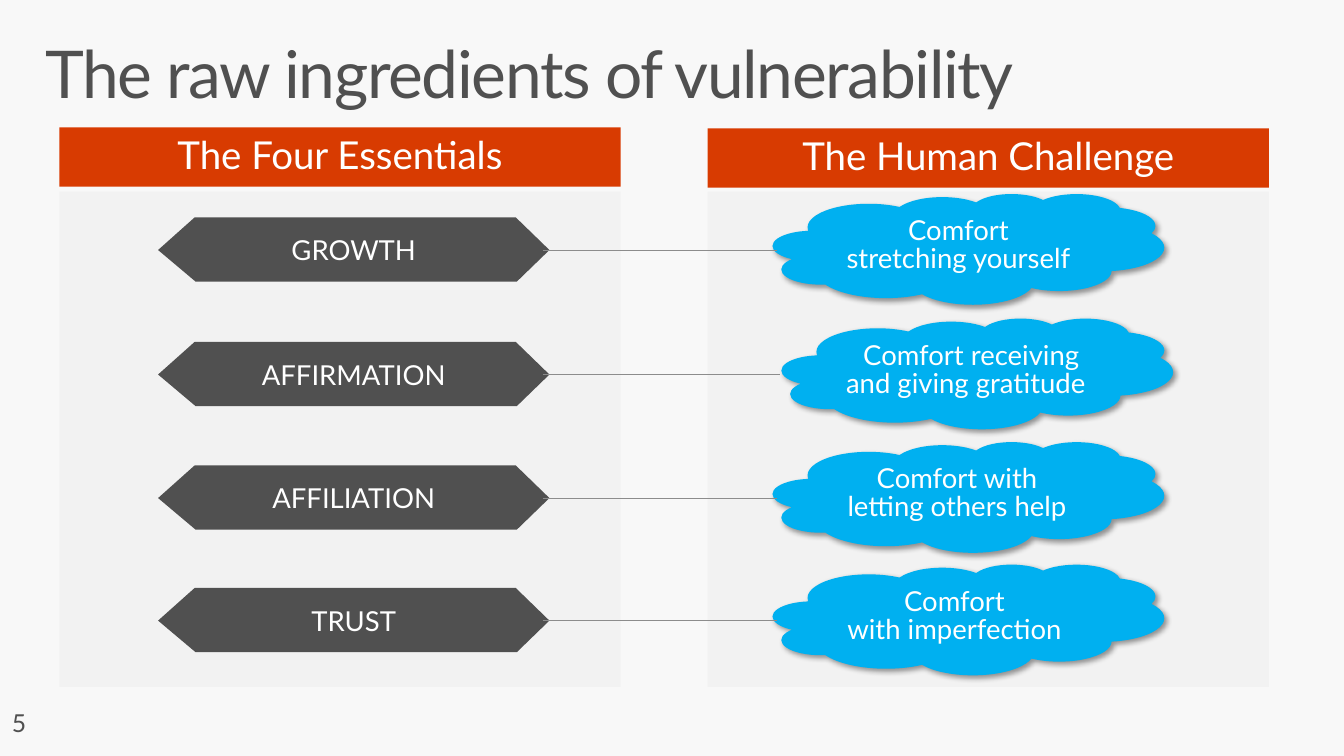
from lxml.etree import SubElement
from pptx import Presentation
from pptx.dml.color import RGBColor
from pptx.enum.shapes import MSO_CONNECTOR as CONNECTOR, MSO_SHAPE as SHAPE
from pptx.enum.text import MSO_ANCHOR as ANCHOR, PP_ALIGN as ALIGN
from pptx.oxml.ns import qn
from pptx.util import Pt

PX = 9144  # EMU per px, 100 px to the inch
GREY, WHITE, PANEL, ORANGE, BLUE = "505050", "FFFFFF", "F2F2F2", "D83B01", "00B0F0"
rgb = RGBColor.from_string


def paint(shape, color):
    """Give the shape a flat fill with no outline or shadow."""
    shape.fill.solid()
    shape.fill.fore_color.rgb = rgb(color)
    shape.line.fill.background()
    shape.shadow.inherit = False


def write(shape, lines, size, color, inset=(12, 6), align=ALIGN.CENTER,
          anchor=ANCHOR.MIDDLE, spacing=1.0, wrap=True):
    """Fill the shape with (text, left indent) paragraphs."""
    frame = shape.text_frame
    frame.word_wrap = wrap
    frame.vertical_anchor = anchor
    frame.margin_left = frame.margin_right = inset[0] * PX
    frame.margin_top = frame.margin_bottom = inset[1] * PX
    for index, (text, indent) in enumerate(lines):
        paragraph = frame.add_paragraph() if index else frame.paragraphs[0]
        paragraph.text = text
        paragraph.alignment = align
        paragraph.line_spacing = spacing
        if indent:
            paragraph._p.get_or_add_pPr().set("marL", str(indent * PX))
        paragraph.font.name = "Lato"
        paragraph.font.size = Pt(size)
        paragraph.font.color.rgb = rgb(color)


presentation = Presentation()
presentation.slide_width = 1360 * PX
presentation.slide_height = 765 * PX
slide = presentation.slides.add_slide(presentation.slide_layouts[6])
slide.background.fill.solid()
slide.background.fill.fore_color.rgb = rgb("F8F8F8")
shapes = slide.shapes

# Title and slide number
title = shapes.add_textbox(30 * PX, 32 * PX, 1300 * PX, 100 * PX)
write(title, [("The raw ingredients of vulnerability", 0)], 48, GREY, (16, 10),
      ALIGN.LEFT, ANCHOR.TOP, 0.9)
title.text_frame.paragraphs[0].runs[0].font._element.set("spc", "-100")
number = shapes.add_textbox(0, 710 * PX, 51 * PX, 41 * PX)
write(number, [("5", 0)], 18, GREY, align=ALIGN.LEFT, anchor=ANCHOR.TOP)

# Two columns, each a heading above a panel
for left, top, heading in [(60, 129, "The Four Essentials"),
                           (716, 130, "The Human Challenge")]:
    panel = shapes.add_shape(SHAPE.RECTANGLE, left * PX, 194 * PX, 568 * PX, 501 * PX)
    paint(panel, PANEL)
    header = shapes.add_shape(SHAPE.RECTANGLE, left * PX, top * PX, 568 * PX, 60 * PX)
    paint(header, ORANGE)
    write(header, [(heading, 0)], 28, WHITE, (16, 10), spacing=0.9)

# Each row joins an essential to its challenge
rows = [
    (220, 0, "GROWTH", [("Comfort\vstretching yourself", 8)]),
    (346, 9, "AFFIRMATION", [("Comfort receiving", 16), ("and giving gratitude", 5)]),
    (471, 0, "AFFILIATION", [("Comfort with\vletting others help", 5)]),
    (595, 0, "TRUST", [("Comfort\vwith imperfection", 0)]),
]
for top, shift, essential, challenge in rows:
    builder = shapes.build_freeform(197, top, scale=PX)
    builder.add_line_segments([(160, top + 33), (198, top + 65), (523, top + 65),
                               (556, top + 33), (522, top)])
    banner = builder.convert_to_shape()
    paint(banner, GREY)
    write(banner, [(essential, 0)], 20, WHITE)

    cloud = shapes.add_shape(SHAPE.CLOUD, (782 + shift) * PX, (top - 24) * PX,
                             396 * PX, 112 * PX)
    paint(cloud, BLUE)
    write(cloud, challenge, 20, WHITE, spacing=0.85, wrap=False)
    effects = cloud._element.spPr.find(qn("a:effectLst"))
    shadow = SubElement(effects, qn("a:outerShdw"), blurRad=str(Pt(4)), dist=str(Pt(3)),
                        dir="2700000", algn="tl", rotWithShape="0")
    shadow_color = SubElement(shadow, qn("a:srgbClr"), val="000000")
    SubElement(shadow_color, qn("a:alpha"), val="40000")

    link = shapes.add_connector(CONNECTOR.STRAIGHT, 549 * PX, (top + 33) * PX,
                                (786 + shift // 3) * PX, (top + 33) * PX)
    link.line.color.rgb = rgb("8C8C8C")
    link.line.width = Pt(0.5)
    SubElement(link._element.spPr, qn("a:effectLst"))

presentation.save("out.pptx")
